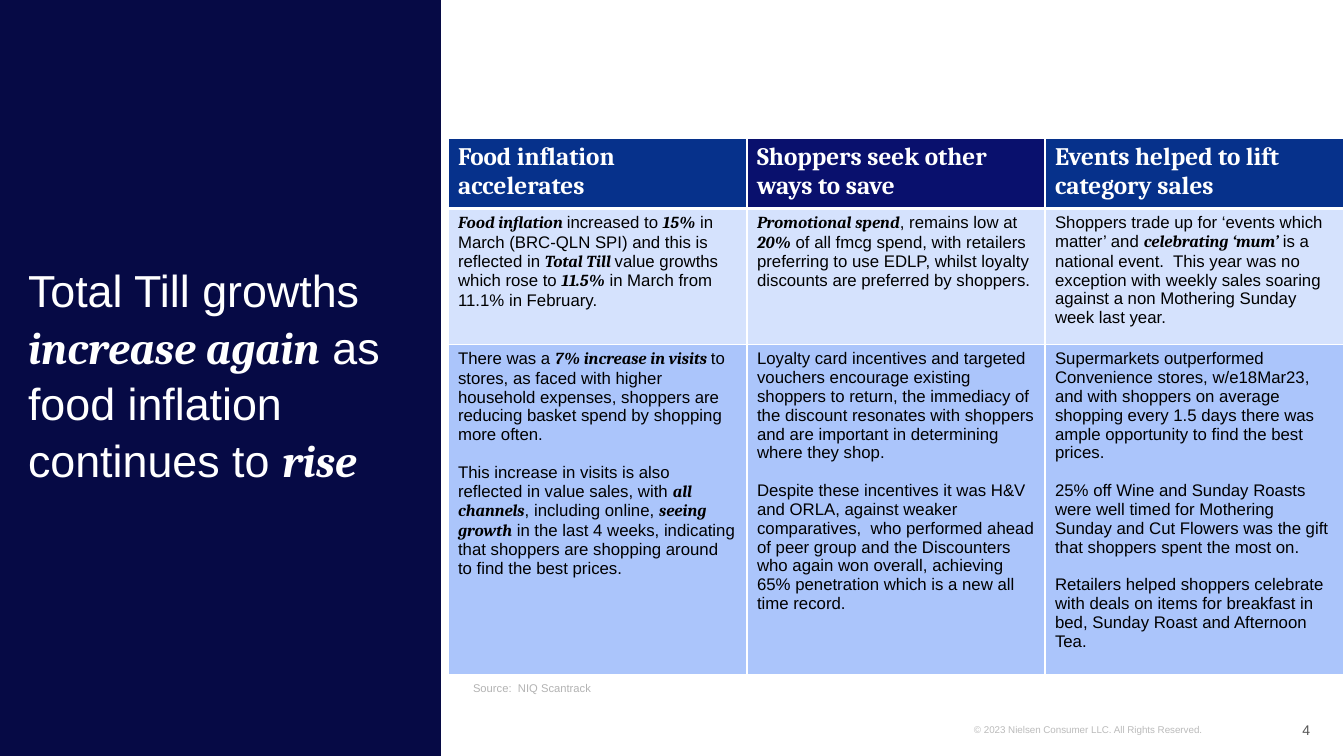
from lxml.etree import SubElement
from pptx import Presentation
from pptx.dml.color import RGBColor
from pptx.enum.shapes import MSO_SHAPE
from pptx.enum.text import MSO_ANCHOR, PP_ALIGN
from pptx.oxml.ns import qn
from pptx.util import Pt

EMU_PER_PX = 914400 / 100.8
WHITE = RGBColor(0xFF, 0xFF, 0xFF)
BLACK = RGBColor(0x00, 0x00, 0x00)
NAVY = RGBColor(0x06, 0x0A, 0x45)
HEADER_BLUE = RGBColor(0x06, 0x31, 0x8B)
HEADER_INDIGO = RGBColor(0x09, 0x10, 0x6D)
PALE_BLUE = RGBColor(0xD5, 0xE2, 0xFD)
MID_BLUE = RGBColor(0xAB, 0xC5, 0xFB)
SOURCE_GREY = RGBColor(0xB3, 0xB3, 0xB3)
COPYRIGHT_GREY = RGBColor(0xBB, 0xBB, 0xBB)
NUMBER_GREY = RGBColor(0x55, 0x55, 0x55)

PLAIN = {"name": "Arial", "bold": False, "italic": False}
EMPHASIS = {"name": "Cambria", "bold": True, "italic": True}
HEADING = {"name": "Cambria", "bold": True, "italic": False}

COLUMN_WIDTHS = [299, 298, 299]
ROW_HEIGHTS = [69, 136, 320]
HEADER_FILLS = [HEADER_BLUE, HEADER_INDIGO, HEADER_BLUE]
BODY_FILLS = [PALE_BLUE, MID_BLUE]

# Text between asterisks is emphasised.
TITLE = "Total Till growths *increase again* as food inflation continues to *rise*"
HEADINGS = [
    "Food inflation accelerates",
    "Shoppers seek other ways to save",
    "Events helped to lift category sales",
]
BODY_ROWS = [
    [
        ["*Food inflation *increased to *15%* in March (BRC-QLN SPI) and this is reflected in "
         "*Total Till *value growths which rose to *11.5%* in March from 11.1% in February."],
        ["*Promotional spend*, remains low at *20%* of all fmcg spend, with retailers "
         "preferring to use EDLP, whilst loyalty discounts are preferred by shoppers."],
        ["Shoppers trade up for ‘events which matter’ and *celebrating ‘mum’ *is a national "
         "event.  This year was no exception with weekly sales soaring against a non "
         "Mothering Sunday week last year."],
    ],
    [
        ["There was a *7% increase in visits *to stores, as faced with higher household "
         "expenses, shoppers are reducing basket spend by shopping more often.",
         "This increase in visits is also reflected in value sales, with *all channels*, "
         "including online, *seeing growth* in the last 4 weeks, indicating that shoppers "
         "are shopping around to find the best prices."],
        ["Loyalty card incentives and targeted vouchers encourage existing shoppers to "
         "return, the immediacy of the discount resonates with shoppers and are important "
         "in determining where they shop.",
         "Despite these incentives it was H&V and ORLA, against weaker comparatives,  who "
         "performed ahead of peer group and the Discounters who again won overall, "
         "achieving 65% penetration which is a new all time record."],
        ["Supermarkets outperformed Convenience stores, w/e18Mar23, and with shoppers on "
         "average shopping every 1.5 days there was ample opportunity to find the best prices.",
         "25% off Wine and Sunday Roasts were well timed for Mothering Sunday and Cut "
         "Flowers was the gift that shoppers spent the most on.",
         "Retailers helped shoppers celebrate with deals on items for breakfast in bed, "
         "Sunday Roast and Afternoon Tea."],
    ],
]


def px(length):
    return round(length * EMU_PER_PX)


def set_attributes(target, values):
    for name, value in values.items():
        setattr(target, name, value)


def write_paragraph(paragraph, text, size, color, base=PLAIN):
    """Write text as runs, switching to emphasis at each asterisk."""
    for index, part in enumerate(text.split("*")):
        if part:
            run = paragraph.add_run()
            run.text = part
            set_attributes(run.font, {**(EMPHASIS if index % 2 else base), "size": Pt(size)})
            run.font.color.rgb = color


def add_panel(slide, left, top, width, height, color):
    panel = slide.shapes.add_shape(
        MSO_SHAPE.RECTANGLE, px(left), px(top), px(width), px(height))
    panel.shadow.inherit = False
    panel.fill.solid()
    panel.fill.fore_color.rgb = color
    panel.line.fill.background()


def add_label(slide, box, text, size, color, anchor=MSO_ANCHOR.TOP,
              alignment=PP_ALIGN.LEFT, line_spacing=1.0):
    frame = slide.shapes.add_textbox(*map(px, box)).text_frame
    set_attributes(frame, {
        "word_wrap": True, "vertical_anchor": anchor,
        "margin_left": 0, "margin_right": 0,
        "margin_top": px(5), "margin_bottom": px(5),
    })
    paragraph = frame.paragraphs[0]
    set_attributes(paragraph, {"alignment": alignment, "line_spacing": line_spacing})
    write_paragraph(paragraph, text, size, color)


def set_borders(cell, widths):
    """Draw white borders; widths are points for left, right, top and bottom."""
    properties = cell._tc.get_or_add_tcPr()
    for index, (side, width) in enumerate(zip("LRTB", widths)):
        line = SubElement(properties, qn(f"a:ln{side}"), w=str(Pt(width)))
        fill = SubElement(line, qn("a:solidFill"))
        SubElement(fill, qn("a:srgbClr"), val=str(WHITE))
        properties.insert(index, line)


def fill_cell(cell, paragraphs, size, color, fill, base=PLAIN):
    cell.fill.solid()
    cell.fill.fore_color.rgb = fill
    for index, text in enumerate(paragraphs):
        frame = cell.text_frame
        paragraph = frame.add_paragraph() if index else frame.paragraphs[0]
        if index:
            paragraph.space_before = Pt(13.5)
        write_paragraph(paragraph, text, size, color, base)


def add_findings_table(slide, left, top):
    table = slide.shapes.add_table(
        len(ROW_HEIGHTS), len(COLUMN_WIDTHS), px(left), px(top),
        px(sum(COLUMN_WIDTHS)), px(sum(ROW_HEIGHTS))).table
    for column, width in zip(table.columns, COLUMN_WIDTHS):
        column.width = px(width)
    for row, height in zip(table.rows, ROW_HEIGHTS):
        row.height = px(height)
    for column, (heading, fill) in enumerate(zip(HEADINGS, HEADER_FILLS)):
        cell = table.cell(0, column)
        fill_cell(cell, [heading], 18, WHITE, fill, HEADING)
        set_borders(cell, [1, 1, 1, 3])
    for row, (contents, fill) in enumerate(zip(BODY_ROWS, BODY_FILLS), start=1):
        for column, paragraphs in enumerate(contents):
            cell = table.cell(row, column)
            fill_cell(cell, paragraphs, 12, BLACK, fill)
            set_borders(cell, [1, 1, 3 if row == 1 else 1, 1])


def main():
    presentation = Presentation()
    presentation.slide_width = px(1344)
    presentation.slide_height = px(756)
    slide = presentation.slides.add_slide(presentation.slide_layouts[6])
    add_panel(slide, 0, 0, 441, 756, NAVY)
    add_label(slide, (974, 719, 286, 22),
              "© 2023 Nielsen Consumer LLC. All Rights Reserved.", 7, COPYRIGHT_GREY)
    add_label(slide, (1211, 710, 99, 40), "4", 10, NUMBER_GREY,
              MSO_ANCHOR.MIDDLE, PP_ALIGN.RIGHT)
    add_label(slide, (28, 228, 386, 263), TITLE, 32, WHITE,
              MSO_ANCHOR.BOTTOM, line_spacing=1.05)
    add_label(slide, (473, 660, 837, 40), "Source:  NIQ Scantrack", 8, SOURCE_GREY,
              MSO_ANCHOR.BOTTOM)
    add_findings_table(slide, 448, 138)
    presentation.save("out.pptx")


if __name__ == "__main__":
    main()
